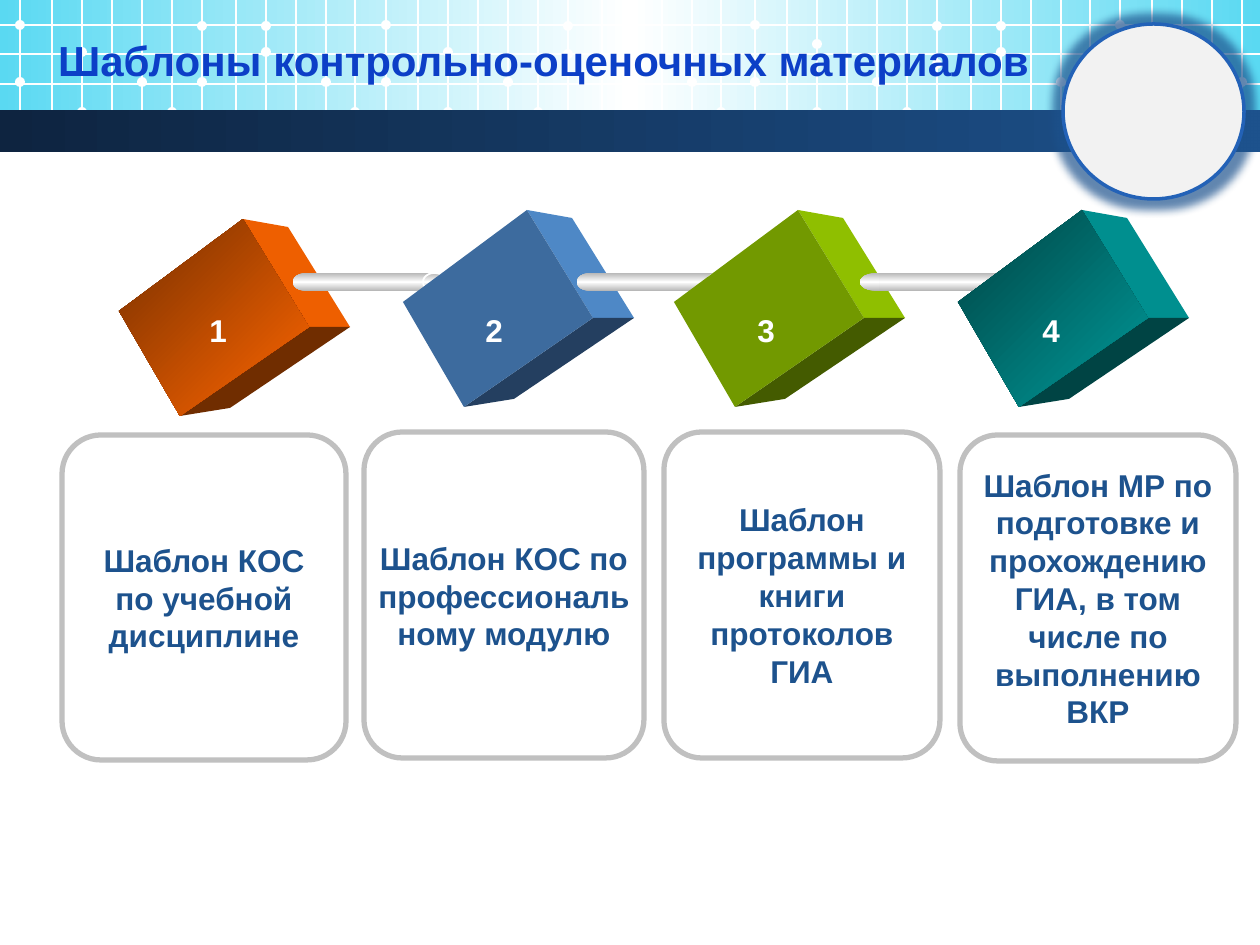
import copy

import pptx
import pptx.dml.color
import pptx.enum.shapes
import pptx.enum.text
import pptx.oxml
import pptx.oxml.ns
import pptx.util
from lxml import etree

SCALE = 914400 / 126  # EMU in one px
SHAPE = pptx.enum.shapes.MSO_SHAPE
ALIGN = pptx.enum.text.PP_ALIGN
MIDDLE = pptx.enum.text.MSO_ANCHOR.MIDDLE
qn = pptx.oxml.ns.qn

HUES = {
    "white": "FFFFFF", "sky": "5AD9F2", "night": "0E2440", "navy": "1D528D",
    "title": "0C3FC7", "disc": "F2F2F2", "ring": "2362B7",
    "edge": "C0C0C0", "steel": "B6B6B6",
}


def emu(px):
    return pptx.util.Emu(round(px * SCALE))


def rgb(hue):
    return pptx.dml.color.RGBColor.from_string(HUES.get(hue, hue))


class Deck:
    def __init__(self, font="Arial"):
        self.font = font
        self.file = pptx.Presentation()
        self.file.slide_width = emu(1260)
        self.file.slide_height = emu(945)
        self.slide = self.file.slides.add_slide(self.file.slide_layouts[5])
        self.shapes = self.slide.shapes

    def paint(self, item, fill, line=None, width=1, angle=0):
        """Fill with one hue, a list of evenly spaced gradient hues, or nothing."""
        item.shadow.inherit = False
        if fill is None:
            item.fill.background()
        elif isinstance(fill, list):
            item.fill.gradient()
            item.fill.gradient_angle = angle
            stops = item.element.spPr.find(".//" + qn("a:gsLst"))
            for _ in fill[2:]:
                stops.append(copy.deepcopy(stops[-1]))
            for i, stop in enumerate(item.fill.gradient_stops):
                stop.position = i / (len(fill) - 1)
                stop.color.rgb = rgb(fill[i])
        else:
            item.fill.solid()
            item.fill.fore_color.rgb = rgb(fill)
        if line:
            item.line.color.rgb = rgb(line)
            item.line.width = pptx.util.Pt(width)
        else:
            item.line.fill.background()
        return item

    def shape(self, kind, box, fill, line=None, width=1, angle=0):
        item = self.shapes.add_shape(kind, *map(emu, box))
        return self.paint(item, fill, line, width, angle)

    def face(self, points, fill, angle=0):
        pen = self.shapes.build_freeform(*points[0], scale=SCALE)
        pen.add_line_segments(points[1:], close=True)
        return self.paint(pen.convert_to_shape(), fill, angle=angle)

    def line(self, x1, y1, x2, y2):
        item = self.shapes.add_connector(
            pptx.enum.shapes.MSO_CONNECTOR.STRAIGHT, *map(emu, (x1, y1, x2, y2)))
        item.line.color.rgb = rgb("white")
        item.line.width = pptx.util.Pt(0.75)
        etree.SubElement(item.element.spPr, qn("a:effectLst"))

    def letter(self, item, text, hue, size=18, align=ALIGN.CENTER, wrap=True):
        """Put styled text into a shape."""
        frame = item.text_frame
        frame.text = text
        frame.word_wrap = wrap
        frame.vertical_anchor = MIDDLE
        para = frame.paragraphs[0]
        para.alignment = align
        for run in para.runs:
            run.font.name = self.font
            run.font.size = pptx.util.Pt(size)
            run.font.bold = True
            run.font.color.rgb = rgb(hue)

    def label(self, box, text, hue, **style):
        self.letter(self.shapes.add_textbox(*map(emu, box)), text, hue, **style)

    def title(self, box, text):
        item = self.shapes.title
        item.left, item.top, item.width, item.height = map(emu, box)
        self.letter(item, text, "title", size=24)
        item.element.getparent().append(item.element)  # bring to front

    def card(self, box, text=None):
        item = self.shape(SHAPE.ROUNDED_RECTANGLE, box, "white" if text else None, "edge", 3)
        item.adjustments[0] = 0.137
        if text:
            clear = item.element.spPr.find(qn("a:solidFill"))[0]
            etree.SubElement(clear, qn("a:alpha"), val="31000")
            self.letter(item, text, "navy")

    def cube(self, x, y, front, side, base):
        """Draw a tilted block; x, y is the corner of its bounding box."""
        left, top, near, low = (0, 92), (124, 0), (190, 108), (61, 197)
        back, right, foot = (169, 8), (231, 108), (111, 189)
        for points, fill in (((top, back, right, near), side),
                             ((near, right, foot, low), base),
                             ((left, top, near, low), front)):
            self.face([(x + dx, y + dy) for dx, dy in points], fill, 315)

    def rod(self, x, grow):
        """Draw a steel rod whose lengths are stretched by grow."""
        shine = ["steel", "white", "steel"]
        for kind, dx, y, w, h, line in (
                (SHAPE.OVAL, 0, 273, 26, 18, None),
                (SHAPE.RECTANGLE, 15, 273, 127, 18, None),
                (SHAPE.OVAL, 130, 273, 23, 18, "white"),
                (SHAPE.OVAL, 142, 280, 6, 5, None)):
            box = (x + dx * grow, y, w * grow, h)
            self.shape(kind, box, shine, line, angle=90)

    def grid(self):
        """Draw the header's white grid with its dots, block by block."""
        steps = (0, 32, 62, 92, 122, 152, 182, 216, 246, 276, 306, 335)
        # left edge, columns, height of the varying dots in columns 2 and 6
        for x, count, second, sixth in ((20, 12, 52, 82), (386, 12, 52, 54),
                                        (755, 12, 44, 64), (1120, 5, 52, 0)):
            dots = ((0, 82), (0, 25), (2, second), (2, 112), (4, 82), (5, 112),
                    (6, sixth), (6, 26), (8, 52), (8, 26), (10, 82), (11, 112))
            for step in steps[:count]:
                self.line(x + step, 0, x + step, 139)
            for col, y in dots:
                if col < count:
                    self.shape(SHAPE.OVAL, (x + steps[col] - 5, y - 5, 10, 10), "white")
        for y in (25, 54, 84, 112):
            self.line(0, y, 1260, y)

    def badge(self):
        disc = self.shape(SHAPE.OVAL, (1063, 24, 181, 175), "disc", "ring", 2)
        effects = disc.element.spPr.find(qn("a:effectLst"))
        glow = etree.SubElement(effects, qn("a:glow"), rad=str(emu(18)))
        tint = etree.SubElement(glow, qn("a:srgbClr"), val=HUES["navy"])
        etree.SubElement(tint, qn("a:alpha"), val="70000")


def main():
    deck = Deck()
    deck.shape(SHAPE.RECTANGLE, (0, 0, 1260, 129), ["sky", "white", "sky"])
    deck.grid()
    deck.shape(SHAPE.RECTANGLE, (0, 110, 1260, 42), ["night", "navy"])
    deck.badge()
    deck.title((15, 14, 1057, 92), "Шаблоны контрольно-оценочных материалов")

    deck.card((62, 435, 284, 325), "Шаблон КОС по учебной дисциплине")
    deck.card((364, 432, 280, 326))
    deck.label((359, 532, 290, 127), "Шаблон КОС по профессиональному модулю", "navy")
    deck.card((664, 432, 276, 326), "Шаблон программы и книги протоколов ГИА")
    deck.card((960, 435, 276, 326),
              "Шаблон МР по подготовке и прохождению ГИА, "
              "в том числе по выполнению ВКР")

    cubes = (
        (119, 219, ["762F00", "FF6600"], "EE5F00", "702D00"),
        (403, 210, "3D6B9E", "4E88C6", "243F60"),
        (674, 210, "729900", "8FBF00", "445B00"),
        (958, 210, ["004444", "009999"], "008F8F", "004444"),
    )
    rods = ((293, 1), (577, 1), (860, 1.3))
    for i, cube in enumerate(cubes):
        deck.cube(*cube)
        if i < len(rods):
            deck.rod(*rods[i])
    for i, x in enumerate((197, 473, 745, 1030), 1):
        deck.label((x, 305, 43, 50), str(i), "white", align=ALIGN.LEFT, wrap=False)
    deck.file.save("out.pptx")


if __name__ == "__main__":
    main()
